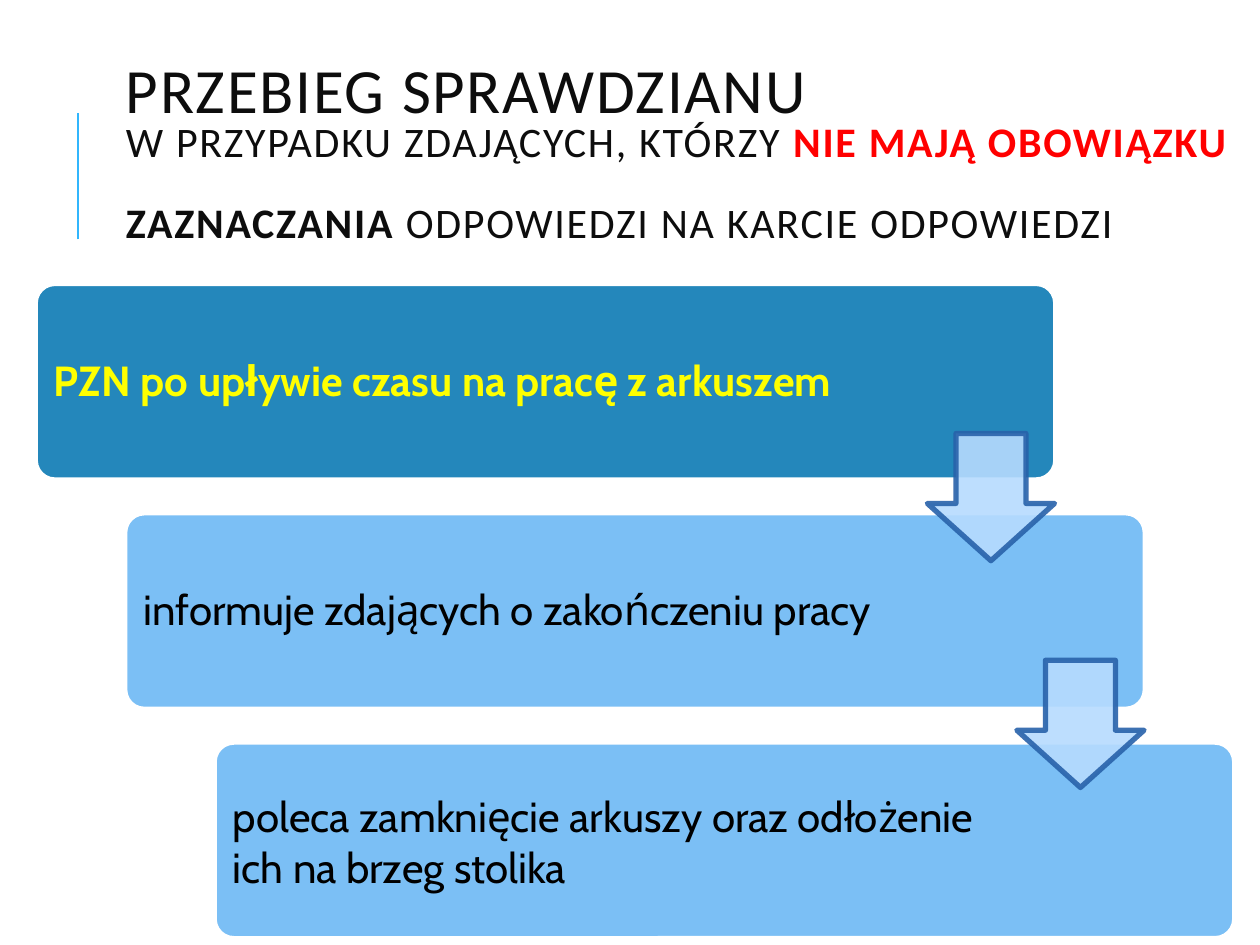
from copy import deepcopy

from lxml import etree
from pptx import Presentation
from pptx import util as u
from pptx.dml.color import RGBColor
from pptx.enum import shapes, text
from pptx.oxml.ns import qn

COLORS = {
    "accent": "31B6FD", "ink": "0D0D0D", "alert": "FF0000", "yellow": "FFFF00",
    "black": "000000", "white": "FFFFFF", "dark": "2487BB", "light": "7BBFF5",
    "arrow": "B6DBFE", "arrow_line": "2862AA",
}

# Staircase of steps, in inches
STEP_LEFT, STEP_TOP = 0.28, 2.25
STEP_WIDTH, STEP_HEIGHT = 8.1, 1.56
SHIFT_X, SHIFT_Y = 0.71, 1.82
ARROW_SIZE = 1.01

# Text, width of its box, fill, text colour, bold, line spacing
STEPS = [
    ("PZN po upływie czasu na pracę z arkuszem", 6.42, "dark", "yellow", True, 0.9),
    ("informuje zdających o zakończeniu pracy", 6.28, "light", "black", False, 0.9),
    ("poleca zamknięcie arkuszy oraz odłożenie ich na brzeg stolika",
     6.28, "light", "black", False, 1.0),
]

# Text, size, colour, bold, line break after
TITLE = [
    ("PRZEBIEG SPRAWDZIANU ", 36, "ink", False, True),
    ("W PRZYPADKU ZDAJĄCYCH, KTÓRZY ", 24, "ink", False, False),
    ("NIE MAJĄ OBOWIĄZKU ", 24, "alert", True, True),
    ("ZAZNACZANIA ", 24, "ink", True, False),
    ("ODPOWIEDZI NA KARCIE ODPOWIEDZI", 24, "ink", False, False),
]


def rgb(name):
    return RGBColor.from_string(COLORS[name])


def inches(*lengths):
    return [u.Inches(length) for length in lengths]


def format_run(run, font_name, size, color, bold):
    run.font.name = font_name
    run.font.size = u.Pt(size)
    run.font.color.rgb = rgb(color)
    run.font.bold = bold


def add_text_frame(slide, box, inset=None):
    frame = slide.shapes.add_textbox(*inches(*box)).text_frame
    frame.word_wrap = True
    frame.vertical_anchor = text.MSO_ANCHOR.MIDDLE
    if inset is not None:
        frame.margin_left = frame.margin_right = u.Inches(inset)
        frame.margin_top = frame.margin_bottom = u.Inches(inset)
    return frame


def add_shape(slide, kind, box, fill, line, adjustments):
    shape = slide.shapes.add_shape(kind, *inches(*box))
    shape.shadow.inherit = False
    for index, value in enumerate(adjustments):
        shape.adjustments[index] = value
    shape.fill.solid()
    shape.fill.fore_color.rgb = rgb(fill)
    shape.line.color.rgb = rgb(line)
    shape.line.width = u.Pt(3)
    return shape


def add_title(slide):
    paragraph = add_text_frame(slide, (0.9, 0.21, 8.98, 2.05)).paragraphs[0]
    paragraph.line_spacing = 0.8
    for words, size, color, bold, breaks in TITLE:
        run = paragraph.add_run()
        run.text = words
        format_run(run, "Calibri", size, color, bold)
        properties = run.font._element
        properties.set("spc", "100")
        if breaks:  # the break keeps the format of its run
            paragraph.add_line_break()
            paragraph._p[-1].append(deepcopy(properties))


def add_accent_line(slide):
    line = slide.shapes.add_connector(
        shapes.MSO_CONNECTOR.STRAIGHT, *inches(0.62, 1.9, 0.62, 0.9))
    line.line.color.rgb = rgb("accent")
    line.line.width = u.Pt(1.5)
    etree.SubElement(line._element.spPr, qn("a:effectLst"))


def add_step(slide, index, words, text_width, fill, color, bold, spacing):
    left = STEP_LEFT + index * SHIFT_X
    top = STEP_TOP + index * SHIFT_Y
    add_shape(slide, shapes.MSO_SHAPE.ROUNDED_RECTANGLE,
              (left, top, STEP_WIDTH, STEP_HEIGHT), fill, "white", [0.1])
    frame = add_text_frame(
        slide, (left + 0.05, top + 0.05, text_width, STEP_HEIGHT - 0.09), 0.1)
    frame.text = words
    paragraph = frame.paragraphs[0]
    paragraph.line_spacing = spacing
    format_run(paragraph.runs[0], "Cabin", 24, color, bold)


def add_arrow(slide, index):
    box = (7.36 + index * SHIFT_X, 3.44 + index * 1.8, ARROW_SIZE, ARROW_SIZE)
    arrow = add_shape(slide, shapes.MSO_SHAPE.DOWN_ARROW, box,
                      "arrow", "arrow_line", [0.55, 0.45])
    # Fill and line are slightly transparent
    for color in arrow._element.spPr.iter(qn("a:srgbClr")):
        etree.SubElement(color, qn("a:alpha"), val="90000")
    etree.SubElement(arrow.line._ln, qn("a:round"))


def main():
    presentation = Presentation()
    presentation.slide_width, presentation.slide_height = inches(10, 7.5)
    slide = presentation.slides.add_slide(presentation.slide_layouts[6])

    # Heading
    add_accent_line(slide)
    add_title(slide)

    # Steps, then the arrows that lie over them
    for index, step in enumerate(STEPS):
        add_step(slide, index, *step)
    for index in range(len(STEPS) - 1):
        add_arrow(slide, index)

    presentation.save("out.pptx")


if __name__ == "__main__":
    main()
